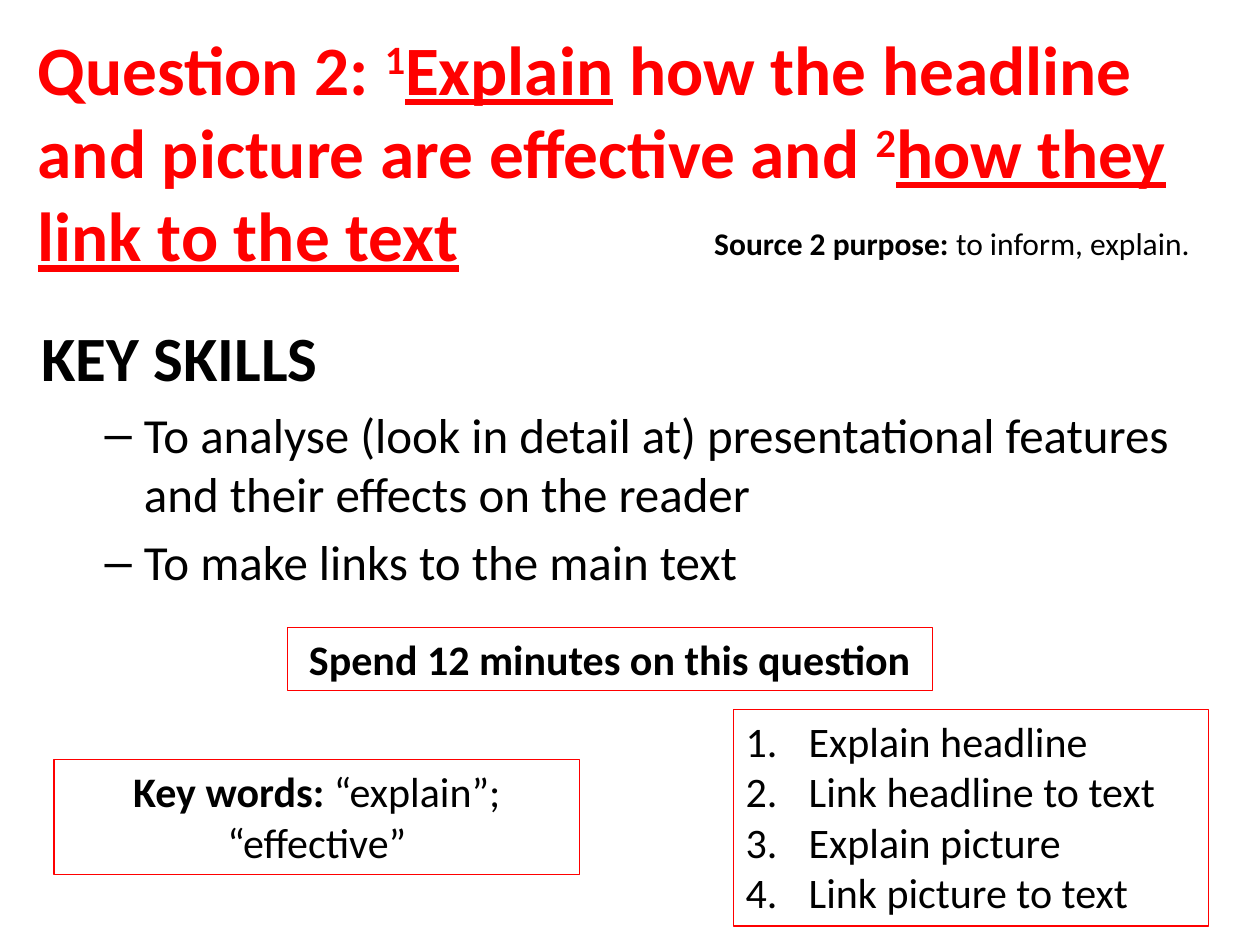
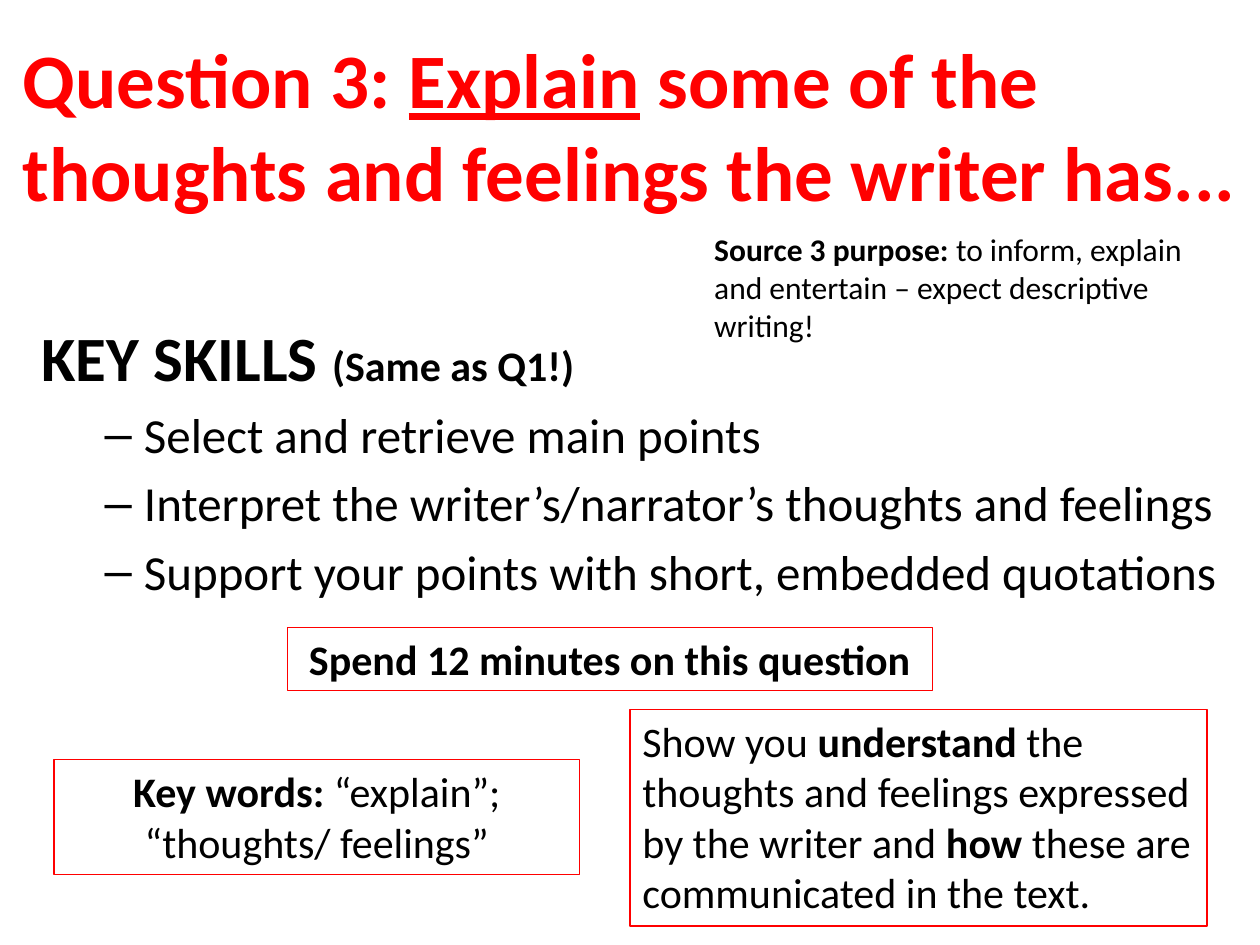
from dataclasses import dataclass

from lxml.etree import SubElement
from pptx import Presentation
from pptx.dml.color import RGBColor
from pptx.enum.shapes import MSO_SHAPE
from pptx.enum.text import MSO_ANCHOR, MSO_AUTO_SIZE, PP_ALIGN
from pptx.oxml.ns import qn
from pptx.util import Inches, Pt


@dataclass(frozen=True)
class Theme:
    """Colours, font and type sizes shared by the slides."""
    red: RGBColor = RGBColor(0xFF, 0x00, 0x00)
    black: RGBColor = RGBColor(0x00, 0x00, 0x00)
    font: str = "Calibri"
    heading: float = 36
    skill: float = 28
    box: float = 24
    purpose: float = 18
    border: float = 0.75


THEME = Theme()


def bounds(*lengths):
    """Turn left, top, width and height in inches into lengths."""
    return [Inches(n) for n in lengths]


def place(shape, at):
    """Move and size a placeholder."""
    shape.left, shape.top, shape.width, shape.height = bounds(*at)


def add_runs(p, runs, size, color=THEME.black):
    """Add (text, marks) runs; marks are b bold, u underline, ^ superscript."""
    for text, marks in runs:
        r = p.add_run()
        r.text = text
        f = r.font
        f.name, f.size = THEME.font, Pt(size)
        f.color.rgb = color
        f.bold = "b" in marks
        f.underline = "u" in marks
        if "^" in marks:
            r._r.get_or_add_rPr().set("baseline", "30000")


def set_bullet(p, indent, tag, **attrs):
    """Give a paragraph a hanging indent and a bullet element."""
    pPr = p._p.get_or_add_pPr()
    pPr.set("marL", str(Inches(indent)))
    pPr.set("indent", str(-Inches(indent)))
    SubElement(pPr, qn(tag), attrs)


def add_title(s, at, runs, size):
    """Fill the title placeholder."""
    sp = s.shapes.title
    place(sp, at)
    tf = sp.text_frame
    tf.auto_size = MSO_AUTO_SIZE.NONE
    tf.vertical_anchor = MSO_ANCHOR.MIDDLE
    p = tf.paragraphs[0]
    p.alignment = PP_ALIGN.LEFT
    add_runs(p, runs, size, THEME.red)


def add_skills(s, skills, note=""):
    """Fill the body placeholder with the heading and its dashed list."""
    sp = s.placeholders[1]
    place(sp, (0.23, 2.48, 9.67, 2.45))
    tf = sp.text_frame
    tf.auto_size = MSO_AUTO_SIZE.NONE
    p = tf.paragraphs[0]
    set_bullet(p, 0.56, "a:buNone")
    p.space_before = Pt(0)
    add_runs(p, [("KEY SKILLS " if note else "KEY SKILLS", "b")], THEME.heading)
    if note:
        add_runs(p, [(note, "b")], THEME.box)
    for skill in skills:
        p = tf.add_paragraph()
        p.level = 1
        add_runs(p, [(skill, "")], THEME.skill)


def add_box(s, at, paragraphs, align=PP_ALIGN.LEFT, numbered=False):
    """Add a red-bordered box of text."""
    sp = s.shapes.add_shape(MSO_SHAPE.RECTANGLE, *bounds(*at))
    sp.shadow.inherit = False
    sp.fill.background()
    sp.line.color.rgb = THEME.red
    sp.line.width = Pt(THEME.border)
    tf = sp.text_frame
    tf.word_wrap = True
    tf.auto_size = MSO_AUTO_SIZE.SHAPE_TO_FIT_TEXT
    tf.vertical_anchor = MSO_ANCHOR.TOP
    for i, runs in enumerate(paragraphs):
        p = tf.add_paragraph() if i else tf.paragraphs[0]
        p.alignment = align
        if numbered:
            set_bullet(p, 0.5, "a:buFont", typeface="+mj-lt")
            set_bullet(p, 0.5, "a:buAutoNum", type="arabicPeriod")
        add_runs(p, runs, THEME.box)


def add_purpose(s, at, label, text):
    """Add the note on the purpose of the source."""
    tf = s.shapes.add_textbox(*bounds(*at)).text_frame
    tf.word_wrap = True
    tf.auto_size = MSO_AUTO_SIZE.SHAPE_TO_FIT_TEXT
    add_runs(tf.paragraphs[0], [(label, "b"), (text, "")], THEME.purpose)


def add_timing_and_keywords(s, keywords):
    """Add the two centred boxes found on every question slide."""
    add_box(s, (2.28, 4.98, 5.12, 0.5),
            [[("Spend 12 minutes on this question", "b")]], PP_ALIGN.CENTER)
    add_box(s, (0.43, 6.03, 4.17, 0.91),
            [[("Key words: ", "b"), (keywords, "")]], PP_ALIGN.CENTER)


def question_two(s):
    """Build the slide on the headline and picture."""
    add_title(s, (0.2, 0.21, 9.69, 1.97), [
        ("Question 2: ", "b"), ("1", "b^"), ("Explain", "bu"),
        (" how the headline and picture are effective and ", "b"),
        ("2", "b^"), ("how they link to the text", "bu")], 39.6)
    add_skills(s, [
        "To analyse (look in detail at) presentational features "
        "and their effects on the reader",
        "To make links to the main text"])
    add_timing_and_keywords(s, "“explain”; “effective”")
    steps = ["Explain headline", "Link headline to text",
             "Explain picture", "Link picture to text"]
    add_box(s, (5.82, 5.63, 3.77, 1.72),
            [[(step, "")] for step in steps], numbered=True)
    add_purpose(s, (5.57, 1.73, 4.02, 0.4),
                "Source 2 purpose:", " to inform, explain.")


def question_three(s):
    """Build the slide on thoughts and feelings."""
    add_title(s, (0.08, 0, 9.88, 1.97), [
        ("Question 3: ", "b"), ("Explain", "bu"),
        (" some of the thoughts and feelings the writer has...", "b")], 44)
    add_skills(s, [
        "Select and retrieve main points",
        "Interpret the writer’s/narrator’s thoughts and feelings",
        "Support your points with short, embedded quotations"],
        "(Same as Q1!)")
    add_timing_and_keywords(s, "“explain”; “thoughts/ feelings”")
    add_box(s, (5, 5.63, 4.58, 1.72), [[
        ("Show you ", ""), ("understand", "b"),
        (" the thoughts and feelings expressed by the writer and ", ""),
        ("how", "b"), (" these are communicated in the text.", "")]])
    add_purpose(s, (5.57, 1.78, 4.02, 1.01), "Source 3 purpose:",
                " to inform, explain and entertain – expect descriptive writing!")


def main():
    """Build and save the presentation."""
    prs = Presentation()
    prs.slide_width, prs.slide_height = Inches(10), Inches(7.5)
    for build in (question_two, question_three):
        build(prs.slides.add_slide(prs.slide_layouts[1]))
    prs.save("out.pptx")


if __name__ == "__main__":
    main()
